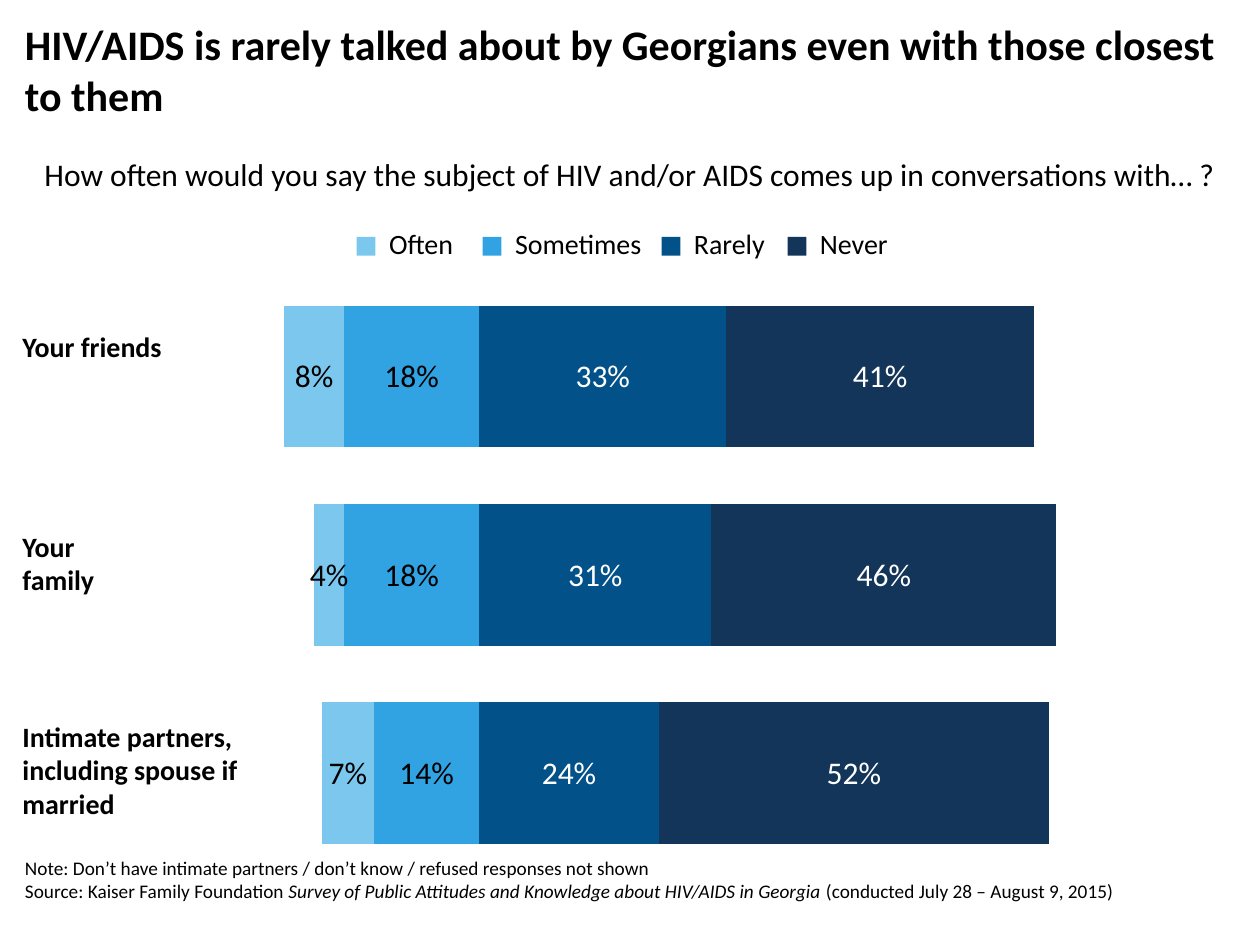
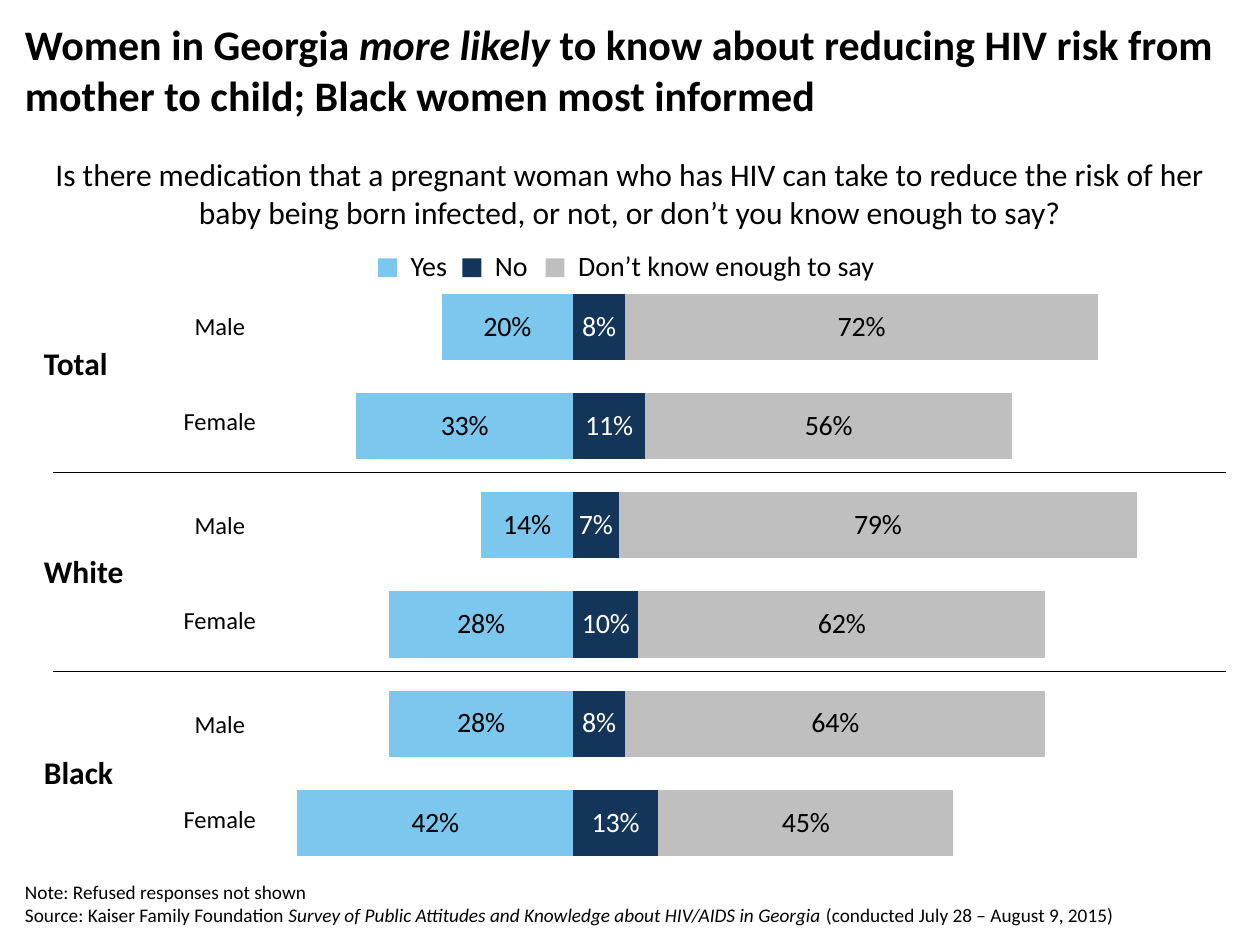
from lxml import etree
from pptx import Presentation
from pptx import util as u
from pptx.chart.data import CategoryChartData
from pptx.dml.color import RGBColor
from pptx.enum import chart as ch, shapes, text
from pptx.oxml import parse_xml
from pptx.oxml.ns import nsdecls, qn

FONT = "Calibri"
COLORS = {
    "ink": "000000", "paper": "FFFFFF", "grey": "BFBFBF",
    "sky": "7BC7ED", "blue": "31A3E3", "deep": "025189", "navy": "133559",
}
SLIDE_W, SLIDE_H = 10, 7.5
MARGIN = 0.1
FULL_W = SLIDE_W - 2 * MARGIN
CHART_TOP, CHART_H = 1.58, 5.5
PLOT = {"x": 0.135, "y": 0.113, "w": 0.85, "h": 0.859}  # shares of the chart
BAND_H = 1.58  # a third of the plot's height
SWATCH = 0.15

# A run is (text, italic)
SOURCE = [
    ("Source: Kaiser Family Foundation ", False),
    ("Survey of Public Attitudes and Knowledge about HIV/AIDS in Georgia ", True),
    ("(conducted July 28 – August 9, 2015)", False),
]

TALK = {
    "title": [("HIV/AIDS is rarely talked about by Georgians even with those "
               "closest to them", False)],
    "question": "How often would you say the subject of HIV and/or AIDS comes up "
                "in conversations with… ?",
    "note": "Note: Don’t have intimate partners / don’t know / refused responses not shown",
    "note_top": 6.61,
    # answer, fill, width of the legend entry
    "legend": [("Often", "sky", 1), ("Sometimes", "blue", 1.42),
               ("Rarely", "deep", 1), ("Never", "navy", 0.92)],
    "legend_at": (2.83, 1.75),
    # answer, fill, label colour, values in row order; negative runs to the left
    "series": [
        ("Sometimes", "blue", "ink", (-0.18, -0.18, -0.14)),
        ("Often", "sky", "ink", (-0.08, -0.04, -0.07)),
        ("Rarely", "deep", "paper", (0.33, 0.31, 0.24)),
        ("Never", "navy", "paper", (0.41, 0.46, 0.52)),
    ],
    "rows": ["Your friends", "Your family",
             "Intimate partners, including spouse if married"],
    "axis_min": -0.4, "gap": 40, "label_size": 18,
}
# top, width and height of each row's name
PEOPLE_BOXES = [(2.57, 1.42, 0.37), (4.15, 1.17, 0.64), (5.66, 2.42, 0.91)]

GROUPS = [("Total", 2.68), ("White", 4.33), ("Black", 5.93)]  # name, top
SEXES = ["Male", "Female"]
SEX_TOP, SEX_STEP = 2.42, 0.75
RULE_TOP = 3.75

MEDICATION = {
    "title": [("Women in Georgia ", False), ("more likely", True),
              (" to know about reducing HIV risk from mother to child; "
               "Black women most informed", False)],
    "question": "Is there medication that a pregnant woman who has HIV can take to "
                "reduce the risk of her baby being born infected, or not, or don’t "
                "you know enough to say?",
    "note": "Note: Refused responses not shown",
    "note_top": 6.8,
    "legend": [("Yes", "sky", 0.67), ("No", "navy", 0.66),
               ("Don’t know enough to say", "grey", 2.75)],
    "legend_at": (3, 1.92),
    "series": [
        ("Yes", "sky", "ink", (-0.20, -0.33, -0.14, -0.28, -0.28, -0.42)),
        ("No", "navy", "paper", (0.08, 0.11, 0.07, 0.10, 0.08, 0.13)),
        ("Don’t know enough to say", "grey", "ink",
         (0.72, 0.56, 0.79, 0.62, 0.64, 0.45)),
    ],
    "rows": [f"{group}, {sex}" for group, _ in GROUPS for sex in SEXES],
    "axis_min": -0.6, "gap": 50, "label_size": 16,
}


def rgb(name):
    return RGBColor.from_string(COLORS[name])


def inches(*lengths):
    return [u.Inches(length) for length in lengths]


def set_font(font, size, color="ink", bold=False):
    font.name, font.size, font.bold = FONT, u.Pt(size), bold
    font.color.rgb = rgb(color)


def add_text(parent, box, paragraphs, size, bold=False, centred=False,
             anchor=text.MSO_ANCHOR.TOP):
    """Each paragraph is a string or a list of (text, italic) runs."""
    frame = parent.add_textbox(*inches(*box)).text_frame
    frame.word_wrap = True
    frame.vertical_anchor = anchor
    for i, runs in enumerate(paragraphs):
        paragraph = frame.add_paragraph() if i else frame.paragraphs[0]
        paragraph.alignment = text.PP_ALIGN.CENTER if centred else text.PP_ALIGN.LEFT
        for words, italic in [(runs, False)] if isinstance(runs, str) else runs:
            run = paragraph.add_run()
            run.text = words
            set_font(run.font, size, bold=bold)
            run.font.italic = italic


def add_legend(slide, entries, left, top):
    legend = slide.shapes.add_group_shape().shapes
    for answer, fill, width in entries:
        swatch = legend.add_shape(shapes.MSO_SHAPE.RECTANGLE,
                                  *inches(left, top + 0.13, SWATCH, SWATCH))
        swatch.shadow.inherit = False
        swatch.fill.solid()
        swatch.fill.fore_color.rgb = rgb(fill)
        swatch.line.fill.background()
        label_gap = SWATCH + 0.01
        add_text(legend, (left + label_gap, top, width - label_gap, 0.37), [answer], 16)
        left += width


def fix_plot_area(chart):
    """Pin the inner plot area to the shares in PLOT."""
    area = chart._chartSpace.chart.plotArea
    for old in area.findall(qn("c:layout")):
        area.remove(old)
    layout = parse_xml(f"<c:layout {nsdecls('c')}><c:manualLayout/></c:layout>")
    settings = {"layoutTarget": "inner", "xMode": "edge", "yMode": "edge", **PLOT}
    for tag, value in settings.items():
        etree.SubElement(layout[0], qn(f"c:{tag}")).set("val", str(value))
    area.insert(0, layout)


def add_bars(slide, content):
    data = CategoryChartData(number_format="0%")
    data.categories = content["rows"][::-1]  # bars are stacked from the bottom up
    for answer, _, _, values in content["series"]:
        data.add_series(answer, values[::-1])
    chart = slide.shapes.add_chart(
        ch.XL_CHART_TYPE.BAR_STACKED,
        *inches(MARGIN, CHART_TOP, FULL_W, CHART_H), data).chart
    chart.has_title = chart.has_legend = False
    set_font(chart.font, 18)
    fix_plot_area(chart)
    for axis in (chart.category_axis, chart.value_axis):
        axis.has_major_gridlines = False
        axis.visible = False
    chart.value_axis.minimum_scale = content["axis_min"]
    chart.value_axis.maximum_scale = 1
    plot = chart.plots[0]
    plot.gap_width, plot.overlap = content["gap"], 100
    plot.vary_by_categories = False
    for series, (_, fill, label_color, _) in zip(plot.series, content["series"]):
        series.invert_if_negative = False
        series.format.fill.solid()
        series.format.fill.fore_color.rgb = rgb(fill)
        labels = series.data_labels
        labels.show_value = True
        labels.number_format = "0%;0%"
        labels.number_format_is_linked = False
        set_font(labels.font, content["label_size"], label_color)


def add_rule(slide, y):
    rule = slide.shapes.add_connector(shapes.MSO_CONNECTOR.STRAIGHT,
                                      *inches(0.42, y, 9.73, y))
    rule.line.color.rgb = rgb("ink")
    rule.line.width = u.Pt(1)
    etree.SubElement(rule._element.spPr, qn("a:effectLst"))


def add_survey_slide(deck, content):
    slide = deck.slides.add_slide(deck.slide_layouts[6])
    slide.background.fill.solid()
    slide.background.fill.fore_color.rgb = rgb("paper")
    add_bars(slide, content)
    add_text(slide.shapes, (MARGIN, 0.1, FULL_W, 1), [content["title"]], 24, bold=True)
    add_text(slide.shapes, (MARGIN, 1.18, FULL_W, 0.4), [content["question"]], 18,
             centred=True)
    add_text(slide.shapes, (MARGIN, content["note_top"], 9.1, 0.6),
             [content["note"], SOURCE], 11, anchor=text.MSO_ANCHOR.BOTTOM)
    add_legend(slide, content["legend"], *content["legend_at"])
    return slide


def main():
    deck = Presentation()
    deck.slide_width, deck.slide_height = inches(SLIDE_W, SLIDE_H)

    talk = add_survey_slide(deck, TALK)
    for person, (top, width, height) in zip(TALK["rows"], PEOPLE_BOXES):
        add_text(talk.shapes, (0.08, top, width, height), [person], 16, bold=True)

    medication = add_survey_slide(deck, MEDICATION)
    for band, (group, top) in enumerate(GROUPS):
        add_text(medication.shapes, (0.25, top, 1.42, 0.4), [group], 18, bold=True)
        for row, sex in enumerate(SEXES):
            sex_top = SEX_TOP + band * BAND_H + row * SEX_STEP
            add_text(medication.shapes, (1.33, sex_top, 0.83, 0.34), [sex], 14,
                     centred=True)
        if band < len(GROUPS) - 1:
            add_rule(medication, RULE_TOP + band * BAND_H)

    deck.save("out.pptx")


if __name__ == "__main__":
    main()
